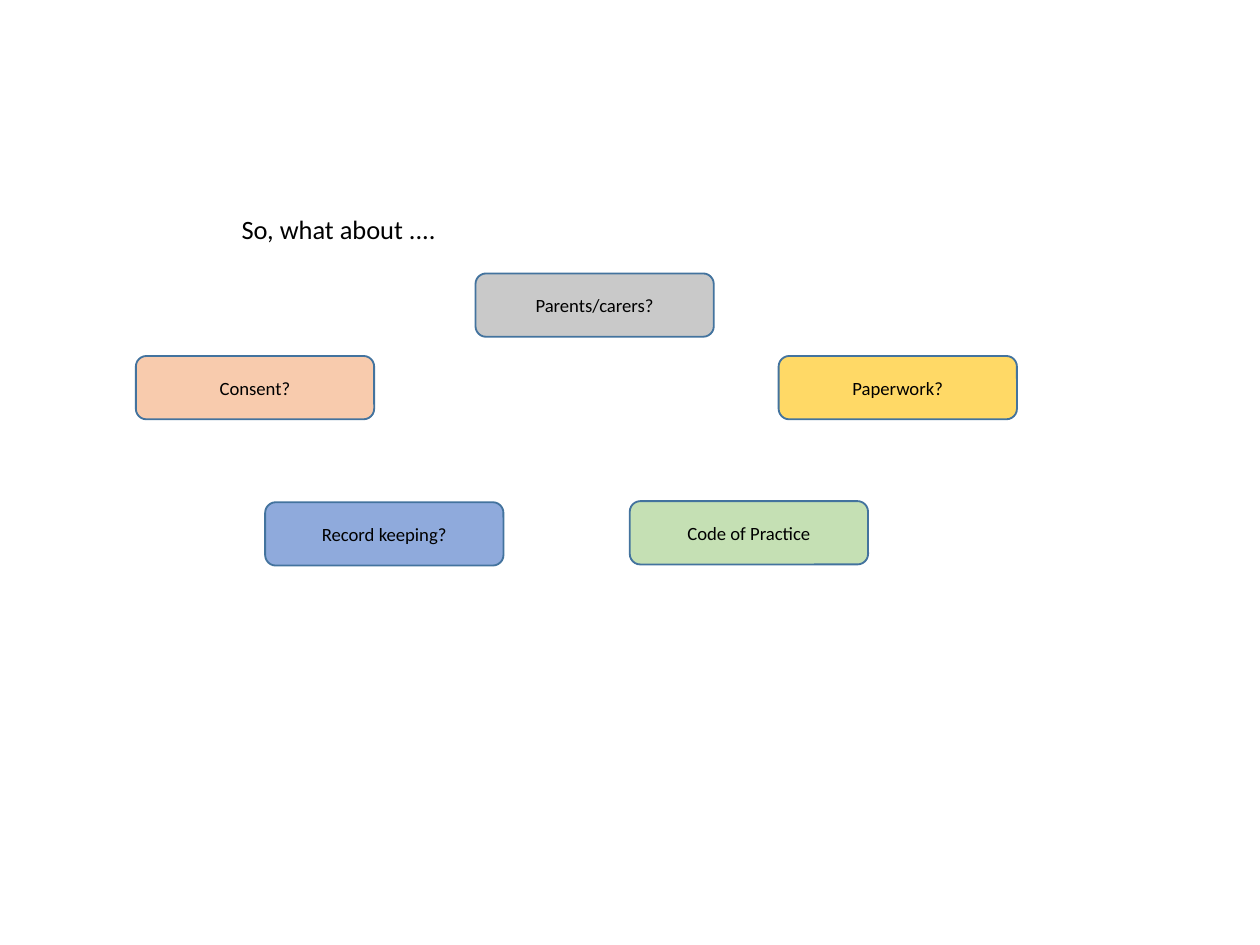
"""Build a slide of five open questions under a short heading."""
from pptx import Presentation
from pptx.dml.color import RGBColor
from pptx.enum.shapes import MSO_SHAPE as Shape
from pptx.enum.text import MSO_ANCHOR as Anchor, PP_ALIGN as Align
from pptx.util import Pt

COLORS = {
    "text": "000000", "outline": "43739E", "gray": "C9C9C9", "peach": "F8CBAD",
    "yellow": "FFD966", "green": "C5E0B4", "blue": "8FAADC",
}
FONT = "Calibri"
SLIDE_SIZE = (680.4, 510.5)
HEADING = "So, what about ...."
HEADING_BOX = (123.4, 109.5, 433.4, 28)
TOPIC_SIZE = (128.7, 34.2)
TOPICS = [
    ("Parents/carers?", "gray", 256.8, 147.7),
    ("Consent?", "peach", 73.4, 192.3),
    ("Paperwork?", "yellow", 420.5, 192.3),
    ("Code of Practice", "green", 340.1, 270.7),
    ("Record keeping?", "blue", 143.2, 271.3),
]


def rgb(name):
    return RGBColor.from_string(COLORS[name])


def write(s, text, size, align):
    tf = s.text_frame
    tf.word_wrap = True
    tf.vertical_anchor = Anchor.MIDDLE
    p = tf.paragraphs[0]
    p.text = text
    p.alignment = align
    p.font.name = FONT
    p.font.size = Pt(size)
    p.font.color.rgb = rgb("text")


def add_topic(slide, text, fill, left, top):
    s = slide.shapes.add_shape(
        Shape.FLOWCHART_ALTERNATE_PROCESS, *map(Pt, (left, top, *TOPIC_SIZE)))
    s.shadow.inherit = False
    s.fill.solid()
    s.fill.fore_color.rgb = rgb(fill)
    s.line.color.rgb = rgb("outline")
    s.line.width = Pt(1)
    write(s, text, 10.1, Align.CENTER)


def main():
    prs = Presentation()
    prs.slide_width, prs.slide_height = map(Pt, SLIDE_SIZE)
    slide = prs.slides.add_slide(prs.slide_layouts[6])
    heading = slide.shapes.add_textbox(*map(Pt, HEADING_BOX))
    write(heading, HEADING, 14.3, Align.LEFT)
    for topic in TOPICS:
        add_topic(slide, *topic)
    prs.save("out.pptx")


if __name__ == "__main__":
    main()
